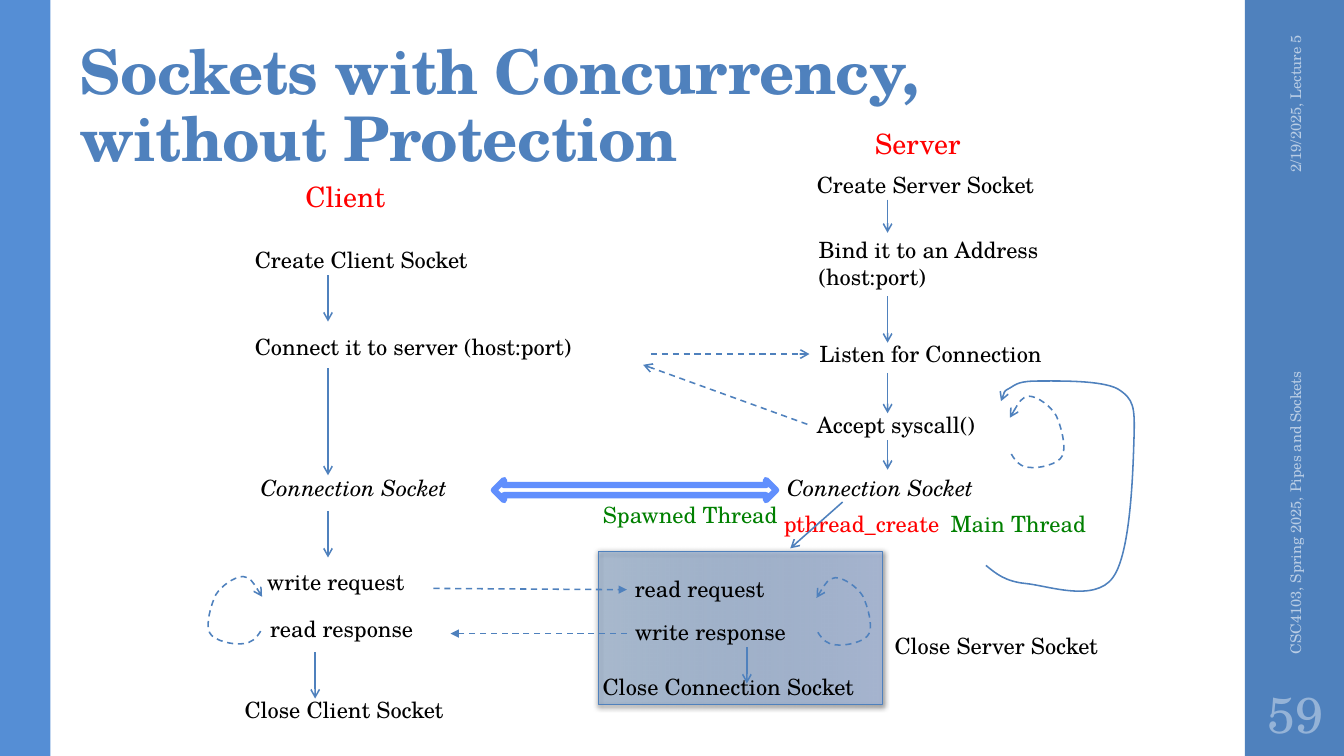
from lxml import etree
from pptx import Presentation
from pptx.dml.color import RGBColor
from pptx.enum.dml import MSO_LINE
from pptx.enum.shapes import MSO_CONNECTOR, MSO_SHAPE
from pptx.enum.text import MSO_ANCHOR, MSO_AUTO_SIZE, PP_ALIGN
from pptx.oxml.ns import qn
from pptx.util import Pt

RECTANGLE, DOUBLE_ARROW = MSO_SHAPE.RECTANGLE, MSO_SHAPE.LEFT_RIGHT_ARROW
STRAIGHT, DASH = MSO_CONNECTOR.STRAIGHT, MSO_LINE.DASH
TOP, MIDDLE, BOTTOM = MSO_ANCHOR.TOP, MSO_ANCHOR.MIDDLE, MSO_ANCHOR.BOTTOM
LEFT, CENTER, RIGHT = PP_ALIGN.LEFT, PP_ALIGN.CENTER, PP_ALIGN.RIGHT
NO_FIT, GROW = MSO_AUTO_SIZE.NONE, MSO_AUTO_SIZE.SHAPE_TO_FIT_TEXT

BLUE = RGBColor(0x4F, 0x81, 0xBD)
LEFT_BAR = RGBColor(0x55, 0x8E, 0xD5)
PALE_BLUE = RGBColor(0xB9, 0xCD, 0xE5)
NUMBER_BLUE = RGBColor(0x95, 0xB3, 0xD7)
ARROW_BLUE = RGBColor(0x61, 0x8F, 0xFD)
GRADIENT = [(RGBColor(0x3F, 0x80, 0xCE), 26), (RGBColor(0xA4, 0xC4, 0xFF), 46)]
BLACK = RGBColor(0, 0, 0)
WHITE = RGBColor(0xFF, 0xFF, 0xFF)
RED = RGBColor(0xFF, 0, 0)
GREEN = RGBColor(0, 0x80, 0)
FONT = "TeX Gyre Schola"

# Step labels: text, left, top, width
STEPS = [
    ("Create Client Socket", 175, 172.1, 169),
    ("Connect it to server (host:port)", 175, 234.4, 244),
    ("write request", 183.6, 402.5, 114.5),
    ("read response", 185.8, 435.6, 118),
    ("Close Client Socket", 167.6, 493.9, 159),
    ("Create Server Socket", 576.4, 118.8, 172.8),
    ("Bind it to an Address\n(host:port)", 577.7, 164.9, 177.1),
    ("Listen for Connection", 578.2, 239.4, 175.7),
    ("Accept syscall()", 576.4, 290.2, 129.6),
    ("read request", 446.4, 407.5, 108.7),
    ("write response", 446.4, 437.8, 123.8),
    ("Close Connection Socket", 423.4, 477.4, 220.3),
    ("Close Server Socket", 631.9, 447.8, 162.7),
]

# Downward arrows: x, then the (top, bottom) pairs on it
DOWN_ARROWS = {
    234.3: [(196.6, 229.7), (263.2, 339.5), (365, 398.2)],
    225.1: [(465.8, 499)],
    634: [(142.6, 166.3), (211.7, 244.8), (266.4, 295.2), (314.6, 335.5)],
    533.5: [(462.2, 488.2)],
}

# Curves: a start point, then two control points and an end point per segment
RETRY_LOOP = [
    (1, 39), (4, 44), (8, 48), (14, 48), (20, 49), (35, 46), (37.5, 40),
    (40.5, 34.5), (36.5, 20), (33, 13), (29, 6.5), (19.5, 0), (13.5, 0),
    (8.5, 0.5), (4.5, 7), (0, 14.5),
]
MAIN_LOOP = [
    (704.2, 403.9), (711.4, 409.7), (717.8, 415.4), (733, 416.9),
    (748.1, 418.3), (781.9, 430.6), (794.9, 412.6),
    (807.8, 395.3), (809.3, 335.5), (810, 313.2),
    (810.7, 290.9), (810, 285.1), (798.5, 277.9),
    (787, 271.4), (754.6, 272.2), (741.6, 272.2),
    (728.6, 272.2), (725.8, 274.3), (721.4, 277.2),
    (717.1, 279.4), (715, 283), (715, 286.6),
]


def write_text(frame, text, size=16, color=BLACK, bold=False, italic=False,
               align=LEFT, anchor=TOP, wrap=False, fit=GROW, spacing=None, tracking=None):
    frame.word_wrap = wrap
    frame.auto_size = fit
    frame.vertical_anchor = anchor
    frame.text = text
    for paragraph in frame.paragraphs:
        paragraph.alignment = align
        paragraph.line_spacing = spacing
        for run in paragraph.runs:
            font = run.font
            font.name, font.size, font.color.rgb = FONT, Pt(size), color
            font.bold, font.italic = bold, italic
            if tracking:
                font._element.set("spc", str(tracking))


def add_label(slide, text, left, top, width, height=26.6, rotation=0, **text_format):
    box = slide.shapes.add_textbox(Pt(left), Pt(top), Pt(width), Pt(height))
    box.rotation = rotation
    write_text(box.text_frame, text, **text_format)


def add_block(slide, kind, left, top, width, height, fill=None, line=None, weight=1):
    shape = slide.shapes.add_shape(kind, Pt(left), Pt(top), Pt(width), Pt(height))
    shape.shadow.inherit = False
    if fill is not None:
        shape.fill.solid()
        shape.fill.fore_color.rgb = fill
    if line is None:
        shape.line.fill.background()
    else:
        shape.line.color.rgb = line
        shape.line.width = Pt(weight)
    return shape


def set_alpha(color_element, percent):
    etree.SubElement(color_element, qn("a:alpha"), val=str(percent * 1000))


def add_thread_box(slide):
    box = add_block(slide, RECTANGLE, 427.7, 393.8, 203, 109.4, line=BLUE, weight=0.75)
    box.fill.gradient()
    box.fill.gradient_angle = 0
    for stop, (color, _) in zip(box.fill.gradient_stops, GRADIENT):
        stop.color.rgb = color
    properties = box._element.spPr
    for stop, (_, percent) in zip(properties.iter(qn("a:gs")), GRADIENT):
        set_alpha(stop[0], percent)
    shadow = etree.SubElement(properties.find(qn("a:effectLst")), qn("a:outerShdw"),
                              blurRad=str(Pt(4)), dist=str(Pt(1.2)), dir="5400000")
    set_alpha(etree.SubElement(shadow, qn("a:srgbClr"), val=str(BLACK)), 75)


def style_arrow(shape, dashed, head):
    line = shape.line
    line.color.rgb = BLUE
    line.width = Pt(1.1)
    if dashed:
        line.dash_style = DASH
    outline = shape._element.spPr.find(qn("a:ln"))
    etree.SubElement(outline, qn("a:tailEnd"), type=head)


def add_arrow(slide, start, end, dashed=False, head="arrow"):
    points = [Pt(value) for value in (*start, *end)]
    connector = slide.shapes.add_connector(STRAIGHT, *points)
    style_arrow(connector, dashed, head)
    etree.SubElement(connector._element.spPr, qn("a:effectLst"))


def join_as_beziers(curve):
    """Turn each three line segments into one cubic segment."""
    segments = list(curve._element.spPr.iter(qn("a:lnTo")))
    for first in range(0, len(segments), 3):
        cubic = etree.Element(qn("a:cubicBezTo"))
        segments[first].addprevious(cubic)
        for segment in segments[first:first + 3]:
            cubic.append(segment[0])
            segment.getparent().remove(segment)


def add_curve(slide, points, dashed=False):
    start, *others = [(Pt(x), Pt(y)) for x, y in points]
    builder = slide.shapes.build_freeform(*start)
    builder.add_line_segments(others, close=False)
    curve = builder.convert_to_shape()
    join_as_beziers(curve)
    curve.fill.background()
    curve.shadow.inherit = False
    style_arrow(curve, dashed, "arrow")


def add_retry_loop(slide, left, top, x_scale=1, y_scale=1):
    points = [(left + x * x_scale, top + y * y_scale) for x, y in RETRY_LOOP]
    add_curve(slide, points, dashed=True)


def add_frame(slide):
    add_block(slide, RECTANGLE, 889.2, 0, 70.8, 540, fill=BLUE)
    add_block(slide, RECTANGLE, 0, 0, 36, 540, fill=LEFT_BAR)
    side = dict(rotation=270, size=10.5, color=PALE_BLUE, anchor=MIDDLE, wrap=True, fit=NO_FIT)
    add_label(slide, "2/19/2025, Lecture 5", 850.3, 78.5, 149.8, 28.8, align=RIGHT, **side)
    add_label(slide, "CSC4103, Spring 2025, Pipes and Sockets", 784.1, 318.7, 282.2, 28.8, **side)
    add_label(slide, "59", 889.2, 486, 72, 46.8, size=36, color=NUMBER_BLUE,
              align=CENTER, anchor=MIDDLE, wrap=True, fit=NO_FIT)


def add_title(slide, text):
    title = slide.shapes.title
    title.left, title.top, title.width, title.height = Pt(49.7), Pt(18), Pt(763.2), Pt(110.2)
    frame = title.text_frame
    frame.margin_left = frame.margin_right = Pt(7.2)
    frame.margin_top, frame.margin_bottom = Pt(2.2), Pt(3.6)
    write_text(frame, text, size=44, color=BLUE, bold=True, anchor=BOTTOM,
               wrap=True, fit=NO_FIT, spacing=0.9, tracking=-50)


def main():
    presentation = Presentation()
    presentation.slide_width, presentation.slide_height = Pt(960), Pt(540)
    slide = presentation.slides.add_slide(presentation.slide_layouts[5])

    add_frame(slide)
    add_title(slide, "Sockets with Concurrency, without Protection")
    add_thread_box(slide)

    # Headings, steps and thread names
    add_label(slide, "Client", 211, 124.6, 72, 31.7, size=20, color=RED)
    add_label(slide, "Server", 617.8, 87.1, 76.3, 31.7, size=20, color=RED)
    for text, left, top, width in STEPS:
        add_label(slide, text, left, top, width, 26.6 + 19.4 * text.count("\n"))
    for left in (179.1, 555.1):
        add_label(slide, "Connection Socket", left, 334.8, 152.6, italic=True)
    add_label(slide, "Spawned Thread", 423.6, 354.2, 141.8, color=GREEN)
    add_label(slide, "Main Thread", 672, 360.7, 112.3, color=GREEN)
    add_label(slide, "pthread_create", 552.8, 360.7, 173.5, color=RED, wrap=True)

    # Flow within each side
    for x, spans in DOWN_ARROWS.items():
        for top, bottom in spans:
            add_arrow(slide, (x, top), (x, bottom))
    add_arrow(slide, (601.9, 358.6), (564.5, 391.7))

    # Messages between client and server
    add_arrow(slide, (465.1, 252.9), (578.2, 252.9), dashed=True)
    add_arrow(slide, (576.7, 303.1), (459.4, 260.6), dashed=True)
    add_arrow(slide, (309.6, 420.3), (447.8, 421.2), dashed=True, head="triangle")
    add_arrow(slide, (447.8, 452.6), (321.8, 452.6), dashed=True, head="triangle")
    add_block(slide, DOUBLE_ARROW, 352.8, 342.9, 201.6, 14.4,
              fill=WHITE, line=ARROW_BLUE, weight=4.5)

    # Loops
    add_curve(slide, MAIN_LOOP)
    add_retry_loop(slide, 721.4, 283, y_scale=1.06)
    add_retry_loop(slide, 583.2, 412.6)
    add_retry_loop(slide, 187.2, 411.8, x_scale=-1)

    presentation.save("out.pptx")


if __name__ == "__main__":
    main()
